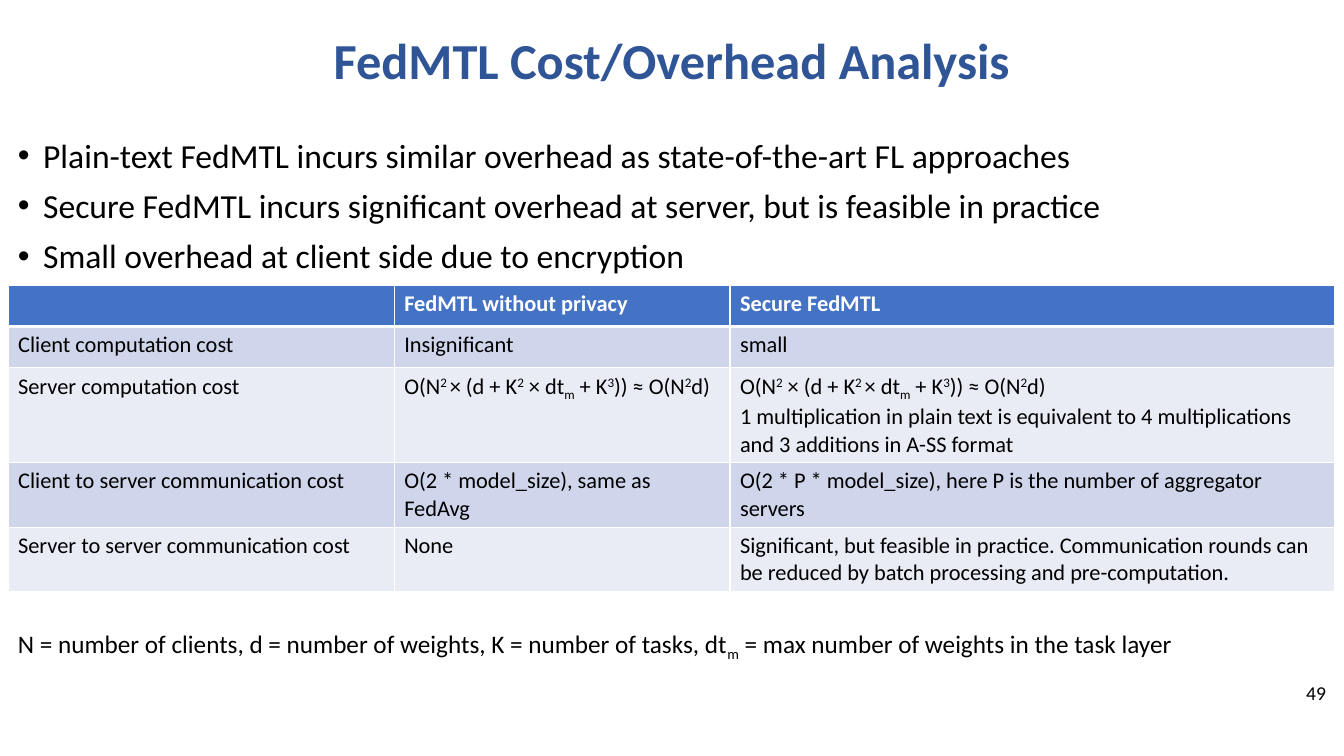
"""Build the FedMTL cost and overhead slide."""
from lxml import etree
from pptx import Presentation
from pptx.dml.color import RGBColor
from pptx.enum.text import MSO_ANCHOR, PP_ALIGN
from pptx.oxml.ns import qn
from pptx.util import Inches, Pt

LEFT, CENTER, RIGHT = PP_ALIGN.LEFT, PP_ALIGN.CENTER, PP_ALIGN.RIGHT
TOP, MIDDLE = MSO_ANCHOR.TOP, MSO_ANCHOR.MIDDLE
BASELINES = {"^": "30000", "_": "-25000"}
BLACK, WHITE = "000000", "FFFFFF"
HEADER_FILL, BAND_FILLS = "4472C4", ("E9EBF5", "CFD5EA")


def color(hex_code):
    """Return the colour for a hex string."""
    return RGBColor.from_string(hex_code)


def write(frame, text, size=16, fill=BLACK, bold=False, align=LEFT, anchor=TOP,
          line_spacing=None, space_before=0, bullet=False, wrap=True):
    """Write lines of text; |^x| is superscript and |_x| is subscript."""
    frame.word_wrap = wrap
    frame.vertical_anchor = anchor
    for index, line in enumerate(text.split("\n")):
        paragraph = frame.add_paragraph() if index else frame.paragraphs[0]
        paragraph.alignment = align
        if line_spacing:
            paragraph.line_spacing = line_spacing
        if index and space_before:
            paragraph.space_before = Pt(space_before)
        if bullet:
            properties = paragraph._p.get_or_add_pPr()
            properties.set("marL", str(Inches(0.25)))
            properties.set("indent", str(-Inches(0.25)))
            etree.SubElement(properties, qn("a:buFont"), typeface="Arial")
            etree.SubElement(properties, qn("a:buChar"), char="•")
        paragraph.font.size = Pt(size)
        for part in line.split("|"):
            run = paragraph.add_run()
            run.text = part.lstrip("^_")
            run.font.name = "Calibri"
            run.font.size = Pt(size)
            run.font.bold = bold
            run.font.color.rgb = color(fill)
            if part[:1] in BASELINES:
                run._r.get_or_add_rPr().set("baseline", BASELINES[part[0]])


presentation = Presentation()
presentation.slide_width = Inches(13.33)
presentation.slide_height = Inches(7.5)
slide = presentation.slides.add_slide(presentation.slide_layouts[6])

text_boxes = [
    ((0.08, 0, 13.17, 1.25), "FedMTL Cost/Overhead Analysis",
     dict(size=36, fill="2F5597", bold=True, align=CENTER, anchor=MIDDLE, line_spacing=0.9)),
    ((0.08, 1.33, 13.17, 1.5),
     "Plain-text FedMTL incurs similar overhead as state-of-the-art FL approaches\n"
     "Secure FedMTL incurs significant overhead at server, but is feasible in practice\n"
     "Small overhead at client side due to encryption",
     dict(size=24, line_spacing=0.9, space_before=10, bullet=True)),
    ((10.25, 6.67, 3, 0.4), "49", dict(size=14, align=RIGHT, anchor=MIDDLE)),
    ((0.08, 6.18, 12.17, 0.4),
     "N = number of clients, d = number of weights, K = number of tasks, "
     "dt|_m| = max number of weights in the task layer",
     dict(size=18, wrap=False)),
]
for box, text, text_format in text_boxes:
    shape = slide.shapes.add_textbox(*map(Inches, box))
    write(shape.text_frame, text, **text_format)

costs = [
    ("", "FedMTL without privacy", "Secure FedMTL"),
    ("Client computation cost", "Insignificant", "small"),
    ("Server computation cost",
     "O(N|^2 |× (d + K|^2| × dt|_m| + K|^3|)) ≈ O(N|^2|d)",
     "O(N|^2| × (d + K|^2 |× dt|_m| + K|^3|)) ≈ O(N|^2|d)\n"
     "1 multiplication in plain text is equivalent to 4 multiplications "
     "and 3 additions in A-SS format"),
    ("Client to server communication cost",
     "O(2 * model_size), same as FedAvg",
     "O(2 * P * model_size), here P is the number of aggregator servers"),
    ("Server to server communication cost", "None",
     "Significant, but feasible in practice. Communication rounds can "
     "be reduced by batch processing and pre-computation."),
]
column_widths = (3.83, 3.33, 6)
row_heights = (0.41, 0.41, 0.94, 0.64, 0.64)
table = slide.shapes.add_table(
    len(costs), len(column_widths), Inches(0.08), Inches(2.83),
    Inches(sum(column_widths)), Inches(sum(row_heights))).table
for column, width in zip(table.columns, column_widths):
    column.width = Inches(width)
for row, height in zip(table.rows, row_heights):
    row.height = Inches(height)

for row_index, row_texts in enumerate(costs):
    is_header = row_index == 0
    for column_index, text in enumerate(row_texts):
        cell = table.cell(row_index, column_index)
        cell_properties = cell._tc.get_or_add_tcPr()
        for side in "LRTB":
            thick = (is_header and side == "B") or (row_index == 1 and side == "T")
            border = etree.SubElement(cell_properties, qn(f"a:ln{side}"),
                                      w=str(Pt(3 if thick else 1)))
            border_fill = etree.SubElement(border, qn("a:solidFill"))
            etree.SubElement(border_fill, qn("a:srgbClr"), val=WHITE)
        cell.fill.solid()
        cell.fill.fore_color.rgb = color(HEADER_FILL if is_header else BAND_FILLS[row_index % 2])
        if text:
            write(cell.text_frame, text, fill=WHITE if is_header else BLACK, bold=is_header)

presentation.save("out.pptx")
